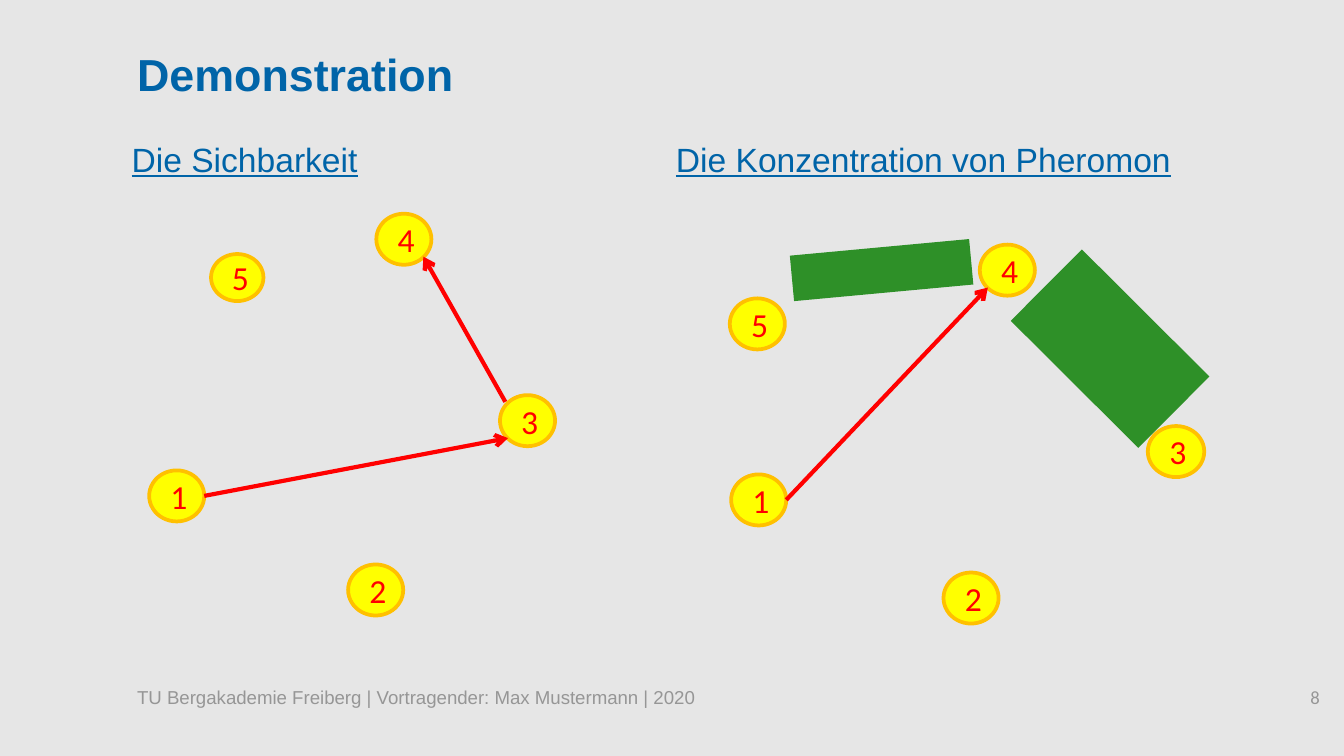
from lxml import etree
from pptx import Presentation
from pptx.dml.color import RGBColor
from pptx.enum.shapes import MSO_CONNECTOR, MSO_SHAPE
from pptx.enum.text import MSO_ANCHOR, PP_ALIGN
from pptx.oxml.ns import qn
from pptx.util import Inches, Pt

BACKGROUND = RGBColor(0xE6, 0xE6, 0xE6)
BLUE = RGBColor(0x00, 0x64, 0xA8)
GRAY = RGBColor(0x96, 0x96, 0x96)
YELLOW = RGBColor(0xFF, 0xFF, 0x00)
ORANGE = RGBColor(0xFF, 0xC0, 0x00)
RED = RGBColor(0xFF, 0x00, 0x00)
GREEN = RGBColor(0x2E, 0x90, 0x28)

STRAIGHT = MSO_CONNECTOR.STRAIGHT
CIRCLE = MSO_SHAPE.FLOWCHART_CONNECTOR
RECTANGLE = MSO_SHAPE.RECTANGLE
LEFT, CENTER, RIGHT = PP_ALIGN.LEFT, PP_ALIGN.CENTER, PP_ALIGN.RIGHT
TOP, MIDDLE = MSO_ANCHOR.TOP, MSO_ANCHOR.MIDDLE

SLIDE_WIDTH = Inches(10)
SLIDE_HEIGHT = SLIDE_WIDTH * 9 // 16

TITLE_FORMAT = {"name": "Arial", "size": Pt(24), "bold": True}
HEADING_FORMAT = {"name": "Arial", "size": Pt(18), "underline": True}
FOOTER_FORMAT = {"name": "Arial", "size": Pt(10)}
NUMBER_FORMAT = {"name": "Calibri", "size": Pt(10)}
NODE_FORMAT = {"name": "Calibri", "size": Pt(18)}

NODE_SIZE = (0.41, 0.38)
VISIBILITY_NODES = {
    "1": (1.11, 3.5),
    "2": (2.59, 4.2),
    "3": (3.72, 2.94),
    "4": (2.8, 1.59),
    "5": (1.57, 1.89, 0.39, 0.35),
}
PHEROMONE_NODES = {
    "1": (5.44, 3.53),
    "2": (7.02, 4.26),
    "3": (8.54, 3.17, 0.42, 0.38),
    "4": (7.29, 1.82),
    "5": (5.43, 2.22),
}
VISIBILITY_ARROWS = [((1.52, 3.69), (3.78, 3.26)), ((3.76, 2.99), (3.15, 1.91))]
PHEROMONE_ARROWS = [((5.85, 3.72), (7.35, 2.14))]
OBSTACLES = [((5.89, 1.84, 1.34, 0.34), 354.7), ((7.59, 2.22, 1.34, 0.75), 44.9)]


def inches(values):
    return [Inches(value) for value in values]


def write_text(shape, text, text_format, color, alignment, anchor):
    frame = shape.text_frame
    frame.word_wrap = True
    frame.vertical_anchor = anchor
    paragraph = frame.paragraphs[0]
    paragraph.alignment = alignment
    run = paragraph.add_run()
    run.text = text
    for attribute, value in text_format.items():
        setattr(run.font, attribute, value)
    run.font.color.rgb = color


def add_text(slide, box, text, text_format, color, alignment=LEFT, anchor=TOP):
    shape = slide.shapes.add_textbox(*inches(box))
    for side in ("left", "top", "right", "bottom"):
        setattr(shape.text_frame, f"margin_{side}", 0)
    write_text(shape, text, text_format, color, alignment, anchor)


def add_filled_shape(slide, kind, box, color):
    shape = slide.shapes.add_shape(kind, *inches(box))
    shape.shadow.inherit = False
    shape.fill.solid()
    shape.fill.fore_color.rgb = color
    return shape


def add_node(slide, label, left, top, width=NODE_SIZE[0], height=NODE_SIZE[1]):
    shape = add_filled_shape(slide, CIRCLE, (left, top, width, height), YELLOW)
    shape.line.color.rgb = ORANGE
    shape.line.width = Pt(2)
    write_text(shape, label, NODE_FORMAT, RED, CENTER, MIDDLE)


def add_arrow(slide, start, end):
    connector = slide.shapes.add_connector(STRAIGHT, *inches(start + end))
    connector.line.color.rgb = RED
    connector.line.width = Pt(2.25)
    line = connector.line._get_or_add_ln()
    etree.SubElement(line, qn("a:tailEnd"), type="arrow")
    etree.SubElement(connector._element.spPr, qn("a:effectLst"))


def add_obstacle(slide, box, rotation):
    shape = add_filled_shape(slide, RECTANGLE, box, GREEN)
    shape.line.fill.background()
    shape.rotation = rotation


def add_graph(slide, nodes, arrows):
    for label, position in nodes.items():
        add_node(slide, label, *position)
    for start, end in arrows:
        add_arrow(slide, start, end)


def main():
    presentation = Presentation()
    presentation.slide_width = SLIDE_WIDTH
    presentation.slide_height = SLIDE_HEIGHT
    slide = presentation.slides.add_slide(presentation.slide_layouts[6])
    slide.background.fill.solid()
    slide.background.fill.fore_color.rgb = BACKGROUND

    add_text(slide, (9.02, 5.1, 0.8, 0.4), "8", NUMBER_FORMAT, GRAY, RIGHT)
    add_text(slide, (1.02, 0.2, 7.99, 0.69), "Demonstration", TITLE_FORMAT, BLUE, anchor=MIDDLE)
    headings = {0.98: "Die Sichbarkeit", 5.03: "Die Konzentration von Pheromon"}
    for left, heading in headings.items():
        add_text(slide, (left, 1.03, 3.93, 3.78), heading, HEADING_FORMAT, BLUE)
    footer = "TU Bergakademie Freiberg | Vortragender: Max Mustermann | 2020"
    add_text(slide, (1.02, 5.1, 7.99, 0.39), footer, FOOTER_FORMAT, GRAY)

    add_graph(slide, VISIBILITY_NODES, VISIBILITY_ARROWS)
    add_graph(slide, PHEROMONE_NODES, PHEROMONE_ARROWS)
    for box, rotation in OBSTACLES:
        add_obstacle(slide, box, rotation)

    presentation.save("out.pptx")


if __name__ == "__main__":
    main()
